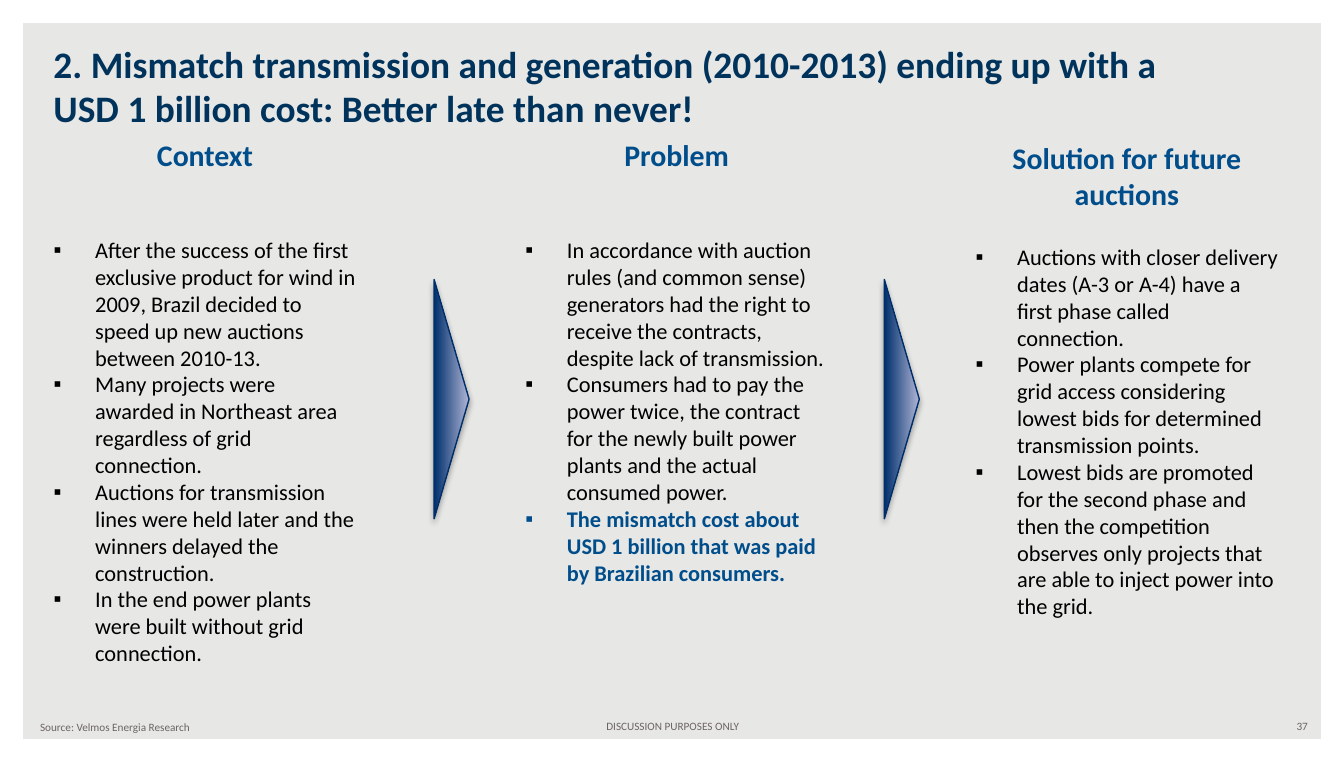
from lxml.etree import SubElement
from pptx import Presentation
from pptx.dml.color import RGBColor
from pptx.enum.shapes import MSO_SHAPE as Shape
from pptx.enum.text import MSO_ANCHOR as Anchor, PP_ALIGN as Align
from pptx.oxml.ns import qn
from pptx.util import Pt

PX = 9144  # 100 px to the inch
NAVY = RGBColor(0x00, 0x33, 0x5C)
BLUE = RGBColor(0x00, 0x4D, 0x8B)
BLACK = RGBColor(0x00, 0x00, 0x00)
GREY = RGBColor(0x6C, 0x64, 0x63)
WHITE = RGBColor(0xFF, 0xFF, 0xFF)
PAPER = RGBColor(0xE7, 0xE7, 0xE5)
DARK = RGBColor(0x00, 0x2F, 0x6C)
LIGHT = RGBColor(0xAF, 0xB5, 0xD5)
EDGE = RGBColor(0x00, 0x2E, 0x6A)

prs = Presentation()
prs.slide_width, prs.slide_height = 1000 * PX, 567 * PX
slide = prs.slides.add_slide(prs.slide_layouts[6])
slide.background.fill.solid()
slide.background.fill.fore_color.rgb = PAPER


def add_box(left, top, width, height, anchor=Anchor.TOP):
    box = slide.shapes.add_textbox(left * PX, top * PX, width * PX, height * PX)
    frame = box.text_frame
    frame.word_wrap = True
    frame.vertical_anchor = anchor
    return frame


def write(par, text, size, color, bold=False, align=Align.LEFT):
    par.text = text
    par.alignment = align
    font = par.runs[0].font
    font.name, font.size, font.bold = "Calibri", Pt(size), bold
    font.color.rgb = color


border = slide.shapes.add_shape(Shape.FRAME, 0, 0, 1000 * PX, 567 * PX)
border.adjustments[0] = 0.03
border.shadow.inherit = False
border.fill.solid()
border.fill.fore_color.rgb = WHITE
border.line.fill.background()

# Footer
for left, top, width, text, align in [
    (750, 530, 233, "37", Align.RIGHT),
    (342, 530, 317, "DISCUSSION PURPOSES ONLY", Align.CENTER),
    (20, 531, 317, "Source: Velmos Energia Research", Align.LEFT),
]:
    frame = add_box(left, top, width, 20, Anchor.MIDDLE)
    write(frame.paragraphs[0], text, 6, GREY, align=align)

# Columns: left, top, height, gap under the heading in points, heading, bullets
COST = "The mismatch cost about USD 1 billion that was paid by Brazilian consumers."
columns = [
    (30, 97, 407, 34, "Context", [
        "After the success of the first exclusive product for wind in 2009, "
        "Brazil decided to speed up new auctions between 2010-13.",
        "Many projects were awarded in Northeast area regardless of grid connection.",
        "Auctions for transmission lines were held later and the winners "
        "delayed the construction.",
        "In the end power plants were built without grid connection.",
    ]),
    (381, 97, 367, 34, "Problem", [
        "In accordance with auction rules (and common sense) generators had "
        "the right to receive the contracts, despite lack of transmission.",
        "Consumers had to pay the power twice, the contract for the newly "
        "built power plants and the actual consumed power.",
        COST,
    ]),
    (716, 99, 370, 17, "Solution for future auctions", [
        "Auctions with closer delivery dates (A-3 or A-4) have a first phase "
        "called connection.",
        "Power plants compete for grid access considering lowest bids for "
        "determined transmission points.",
        "Lowest bids are promoted for the second phase and then the "
        "competition observes only projects that are able to inject power "
        "into the grid.",
    ]),
]
for left, top, height, gap, head, items in columns:
    frame = add_box(left, top, 245, height)
    write(frame.paragraphs[0], head, 16, BLUE, True, Align.CENTER)
    for i, item in enumerate(items):
        par = frame.add_paragraph()
        props = par._p.get_or_add_pPr()
        props.set("marL", str(31 * PX))
        props.set("indent", str(-31 * PX))
        if i == 0:
            par.space_before = Pt(gap)
        SubElement(props, qn("a:buFont"), typeface="Arial")
        SubElement(props, qn("a:buChar"), char="▪")
        key = item == COST
        write(par, item, 12, BLUE if key else BLACK, key)

# Wedges between the columns
for left in (247, 582):
    wedge = slide.shapes.add_shape(
        Shape.ISOSCELES_TRIANGLE, left * PX, 284 * PX, 178 * PX, 26 * PX)
    wedge.rotation = 90
    wedge.fill.gradient()
    wedge.fill.gradient_angle = 90
    for stop, color in zip(wedge.fill.gradient_stops, (DARK, LIGHT)):
        stop.color.rgb = color
    wedge.line.color.rgb = EDGE
    wedge.line.width = Pt(0.75)
    wedge.shadow.inherit = False
    effects = wedge._element.spPr.find(qn("a:effectLst"))
    shade = SubElement(effects, qn("a:outerShdw"), blurRad=str(Pt(3.1)),
                       dist=str(Pt(1.8)), dir="5400000", rotWithShape="0")
    tint = SubElement(shade, qn("a:srgbClr"), val=str(BLACK))
    SubElement(tint, qn("a:alpha"), val="35000")

title = add_box(30, 25, 850, 77, Anchor.BOTTOM)
write(title.paragraphs[0],
      "2. Mismatch transmission and generation (2010-2013) ending up with a "
      "USD 1 billion cost: Better late than never!", 20, NAVY, True)

prs.save("out.pptx")
